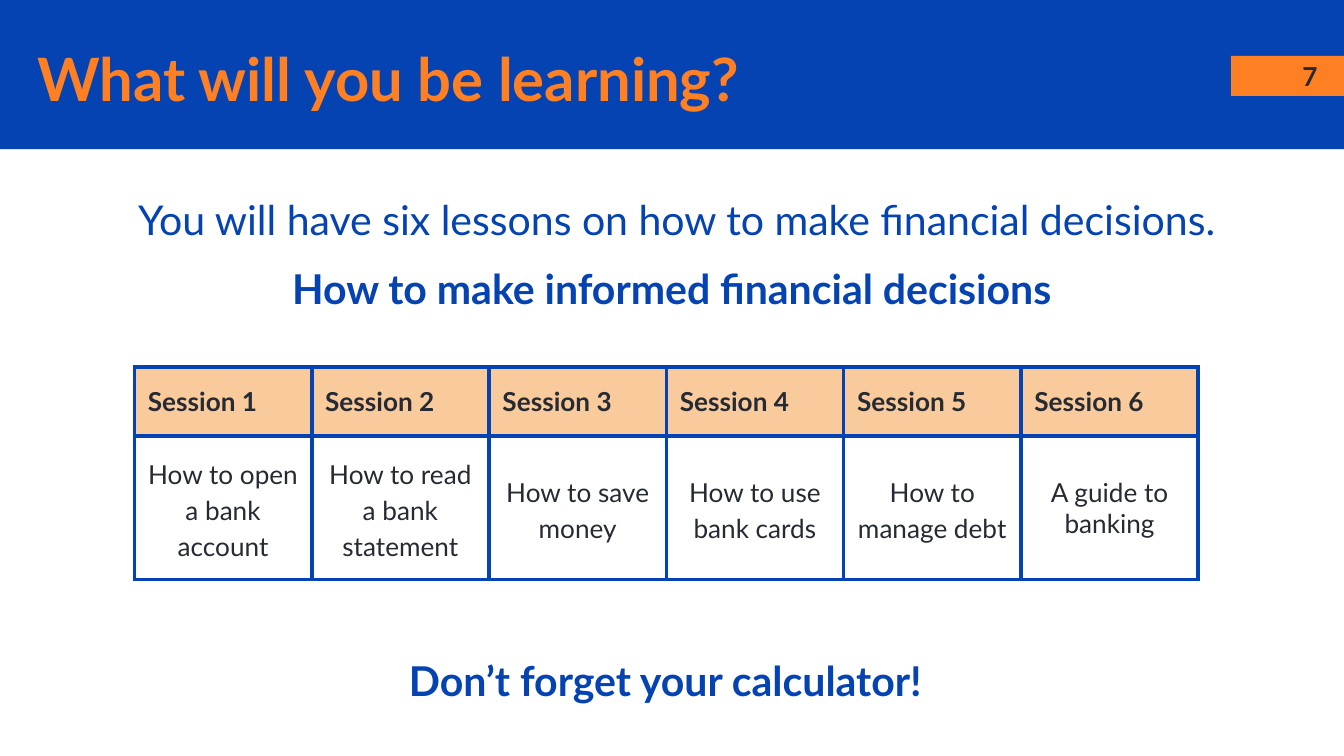
from lxml.etree import SubElement
from pptx import Presentation
from pptx.dml.color import RGBColor
from pptx.enum.shapes import MSO_SHAPE as SHAPE
from pptx.enum.text import MSO_ANCHOR as ANCHOR, MSO_AUTO_SIZE as AUTO, PP_ALIGN as ALIGN
from pptx.oxml.ns import qn
from pptx.util import Pt

BLUE = RGBColor(0x05, 0x43, 0xB3)
ORANGE = RGBColor(0xFF, 0x80, 0x22)
PEACH = RGBColor(0xF9, 0xCB, 0x9C)
DARK = RGBColor(0x26, 0x2A, 0x33)
FONT = "Lato"

TITLE = "What will you be learning?"
PAGE = "7"
SESSIONS = [
    "How to open a bank account",
    "How to read a bank statement",
    "How to save money",
    "How to use bank cards",
    "How to manage debt",
    "A guide to banking",
]
BARS = [
    ((0, 0, 720, 80), BLUE),
    ((659.5, 30, 60.5, 21.5), ORANGE),
]
LINES = [
    ("You will have six lessons on how to make financial decisions.",
     (12.25, 93, 700.5, 41), False, 1.15),
    ("How to make informed financial decisions", (100, 134, 520, 41), True, 1),
    ("Don’t forget your calculator!", (191.5, 344, 330, 41), True, 1),
]
TABLE_LEFT, TABLE_TOP, COL_WIDTH = 72, 196.75, 95
ROW_HEIGHTS = [36.75, 77]


def write(tf, text, size, color, bold, align=ALIGN.CENTER, spacing=1):
    p = tf.paragraphs[0]
    p.text = text
    p.alignment = align
    p.line_spacing = spacing
    p.font.name = FONT
    p.font.size = Pt(size)
    p.font.bold = bold
    p.font.color.rgb = color


def set_margins(target, margin):
    for side in ("left", "top", "right", "bottom"):
        setattr(target, f"margin_{side}", Pt(margin))


def add_text(s, box, text, size, color, bold, spacing=1, anchor=ANCHOR.TOP):
    tf = s.shapes.add_textbox(*map(Pt, box)).text_frame
    tf.word_wrap = True
    tf.vertical_anchor = anchor
    set_margins(tf, 7.2)
    write(tf, text, size, color, bold, spacing=spacing)
    return tf


def add_borders(cell, color, width):
    tcPr = cell._tc.get_or_add_tcPr()
    for side in ("lnL", "lnR", "lnT", "lnB"):
        ln = SubElement(tcPr, qn(f"a:{side}"), w=str(Pt(width)))
        fill = SubElement(ln, qn("a:solidFill"))
        SubElement(fill, qn("a:srgbClr"), val=str(color))


def add_sessions(s):
    width = COL_WIDTH * len(SESSIONS)
    table = s.shapes.add_table(
        2, len(SESSIONS), Pt(TABLE_LEFT), Pt(TABLE_TOP), Pt(width), Pt(sum(ROW_HEIGHTS))
    ).table
    table.horz_banding = False
    for row, height in zip(table.rows, ROW_HEIGHTS):
        row.height = Pt(height)
    for i, topic in enumerate(SESSIONS):
        table.columns[i].width = Pt(COL_WIDTH)
        last = i == len(SESSIONS) - 1
        head, body = table.cell(0, i), table.cell(1, i)
        for cell, margin in ((head, 7.2), (body, 7.2 if last else 5)):
            cell.vertical_anchor = ANCHOR.MIDDLE
            set_margins(cell, margin)
            add_borders(cell, BLUE, 2.25)
        head.fill.solid()
        head.fill.fore_color.rgb = PEACH
        body.fill.background()
        write(head.text_frame, f"Session {i + 1}", 14, DARK, True, ALIGN.LEFT)
        write(body.text_frame, topic, 14, DARK, False, spacing=1 if last else 1.15)


def main():
    prs = Presentation()
    prs.slide_width, prs.slide_height = Pt(720), Pt(405)
    s = prs.slides.add_slide(prs.slide_layouts[5])

    for box, color in BARS:
        sp = s.shapes.add_shape(SHAPE.RECTANGLE, *map(Pt, box))
        sp.shadow.inherit = False
        sp.fill.solid()
        sp.fill.fore_color.rgb = color
        sp.line.fill.background()

    title = s.shapes.title
    s.shapes.element.append(title.element)
    title.left, title.top, title.width, title.height = map(Pt, (20, 16.5, 632, 61))
    tf = title.text_frame
    tf.auto_size = AUTO.NONE
    tf.vertical_anchor = ANCHOR.TOP
    set_margins(tf, 0)
    write(tf, TITLE, 32, ORANGE, True, ALIGN.LEFT, 1.15)

    add_text(s, (683, 31.75, 37.5, 18), PAGE, 14, DARK, True, anchor=ANCHOR.MIDDLE)
    for text, box, bold, spacing in LINES:
        tf = add_text(s, box, text, 22, BLUE, bold, spacing)
        tf.auto_size = AUTO.SHAPE_TO_FIT_TEXT
    add_sessions(s)
    prs.save("out.pptx")


if __name__ == "__main__":
    main()
